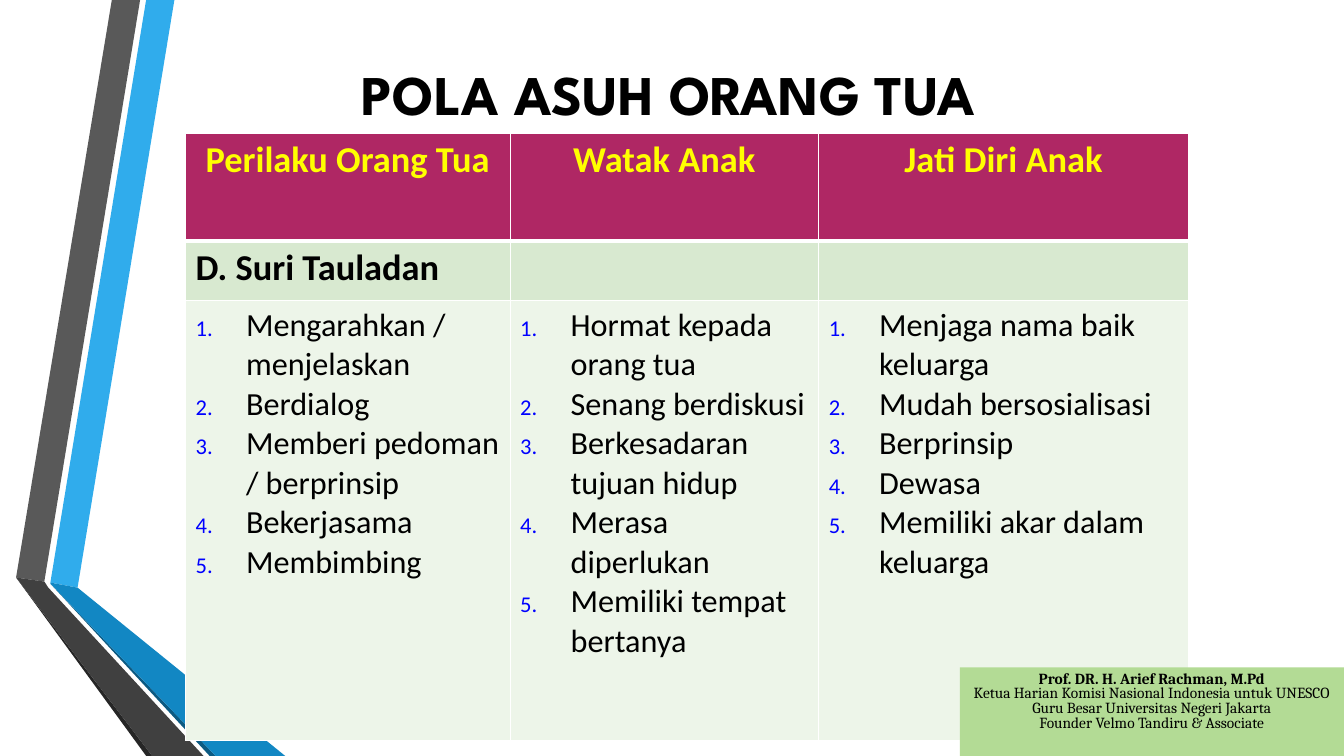
from dataclasses import dataclass

from lxml import etree
from pptx import Presentation
from pptx.dml.color import RGBColor
from pptx.enum import shapes, text
from pptx.oxml import ns
from pptx.util import Inches, Pt


@dataclass(frozen=True)
class Theme:
    black: str = "000000"
    white: str = "FFFFFF"
    header: str = "AF2764"
    header_text: str = "FFFF00"
    section: str = "D8E9D0"
    body: str = "EDF5E9"
    number: str = "0000FF"
    credit: str = "B3DB95"
    title_font: str = "League Spartan"
    table_font: str = "Calibri"
    credit_font: str = "Cambria"
    title_size: int = 40
    heading_size: int = 26
    item_size: int = 23
    credit_size: int = 11


@dataclass(frozen=True)
class Ribbon:
    color: str
    points: tuple[tuple[float, float], ...]


@dataclass(frozen=True)
class Column:
    heading: str
    section: str
    items: tuple[str, ...]
    width: float


@dataclass(frozen=True)
class TextStyle:
    font: str
    size: int
    color: str
    bold: bool = False
    align: text.PP_ALIGN = text.PP_ALIGN.LEFT


THEME = Theme()
CENTER = text.PP_ALIGN.CENTER
TITLE = TextStyle(THEME.title_font, THEME.title_size, THEME.black, True, CENTER)
HEADING = TextStyle(THEME.table_font, THEME.heading_size, THEME.header_text, True, CENTER)
SECTION = TextStyle(THEME.table_font, THEME.heading_size, THEME.black, True)
ITEM = TextStyle(THEME.table_font, THEME.item_size, THEME.black)
CREDIT_NAME = TextStyle(THEME.credit_font, THEME.credit_size, THEME.black, True, CENTER)
CREDIT_ROLE = TextStyle(THEME.credit_font, THEME.credit_size, THEME.black, False, CENTER)

RIBBONS = (
    Ribbon("30ACEC", ((0.5, 5.78), (0.77, 5.83), (1.73, 0), (1.45, 0))),
    Ribbon("595959", ((1.39, 0), (1.11, 0), (0.16, 5.73), (0.44, 5.77))),
    Ribbon("262626", ((0.16, 5.73), (1.45, 7.5), (1.51, 7.5))),
    Ribbon("0C5A82", ((0.5, 5.79), (2.08, 7.5), (2.14, 7.5))),
    Ribbon("1287C3", ((0.5, 5.79), (2.14, 7.5), (2.83, 7.5), (0.77, 5.83), (0.5, 5.78))),
    Ribbon("404040", ((2.02, 7.5), (0.48, 5.83), (0.44, 5.77), (0.16, 5.73), (1.51, 7.5))),
)

COLUMNS = (
    Column("Perilaku Orang Tua", "D. Suri Tauladan",
           ("Mengarahkan / menjelaskan", "Berdialog", "Memberi pedoman / berprinsip",
            "Bekerjasama", "Membimbing"), 3.22),
    Column("Watak Anak", "",
           ("Hormat kepada orang tua", "Senang berdiskusi", "Berkesadaran tujuan hidup",
            "Merasa diperlukan", "Memiliki tempat bertanya"), 3.06),
    Column("Jati Diri Anak", "",
           ("Menjaga nama baik keluarga", "Mudah bersosialisasi", "Berprinsip",
            "Dewasa", "Memiliki akar dalam keluarga"), 3.67),
)
ROW_HEIGHTS = (1.07, 0.59, 4.37)

CREDIT_LINES = (
    "Prof. DR. H. Arief Rachman, M.Pd",
    "Ketua Harian Komisi Nasional Indonesia untuk UNESCO",
    "Guru Besar Universitas Negeri Jakarta",
    "Founder Velmo Tandiru & Associate",
)


def rgb(color: str) -> RGBColor:
    return RGBColor.from_string(color)


def paint(shape, color: str) -> None:
    shape.shadow.inherit = False
    shape.fill.solid()
    shape.fill.fore_color.rgb = rgb(color)
    shape.line.fill.background()


def write(frame, lines: tuple[str, ...], style: TextStyle) -> None:
    frame.text = "\n".join(lines)
    for paragraph in frame.paragraphs:
        paragraph.alignment = style.align
        apply_font(paragraph.font, style)


def apply_font(font, style: TextStyle) -> None:
    font.name = style.font
    font.size = Pt(style.size)
    font.bold = style.bold
    font.color.rgb = rgb(style.color)


def number(paragraph) -> None:
    properties = paragraph._p.get_or_add_pPr()
    properties.set("marL", str(Inches(0.5)))
    properties.set("indent", str(Inches(-0.5)))
    bullets = (
        etree.Element(ns.qn("a:buClr")),
        etree.Element(ns.qn("a:buSzPct"), val="70000"),
        etree.Element(ns.qn("a:buFont"), typeface="+mj-lt"),
        etree.Element(ns.qn("a:buAutoNum"), type="arabicPeriod"),
    )
    etree.SubElement(bullets[0], ns.qn("a:srgbClr"), val=THEME.number)
    for position, bullet in enumerate(bullets):
        properties.insert(position, bullet)


def border(cell, bottom: float, top: float) -> None:
    properties = cell._tc.get_or_add_tcPr()
    widths = {"a:lnL": 1, "a:lnR": 1, "a:lnT": top, "a:lnB": bottom}
    for position, (side, width) in enumerate(widths.items()):
        line = etree.Element(ns.qn(side), w=str(Pt(width)))
        fill = etree.SubElement(line, ns.qn("a:solidFill"))
        etree.SubElement(fill, ns.qn("a:srgbClr"), val=THEME.white)
        properties.insert(position, line)


def draw_ribbon(slide, ribbon: Ribbon) -> None:
    start, *rest = [(Inches(x), Inches(y)) for x, y in ribbon.points]
    builder = slide.shapes.build_freeform(*start)
    builder.add_line_segments(rest, close=True)
    paint(builder.convert_to_shape(), ribbon.color)


def draw_title(slide) -> None:
    title = slide.shapes.add_textbox(Inches(1.84), Inches(0.52), Inches(9.58), Inches(0.8))
    title.text_frame.word_wrap = True
    title.text_frame.vertical_anchor = text.MSO_ANCHOR.MIDDLE
    write(title.text_frame, ("POLA ASUH ORANG TUA",), TITLE)


def draw_table(slide) -> None:
    parenting = slide.shapes.add_table(
        len(ROW_HEIGHTS), len(COLUMNS), Inches(1.84), Inches(1.32),
        Inches(sum(column.width for column in COLUMNS)), Inches(sum(ROW_HEIGHTS))).table
    parenting.horz_banding = False
    for row, height in zip(parenting.rows, ROW_HEIGHTS):
        row.height = Inches(height)
    fills = (THEME.header, THEME.section, THEME.body)
    styles = (HEADING, SECTION, ITEM)
    for column_index, column in enumerate(COLUMNS):
        parenting.columns[column_index].width = Inches(column.width)
        contents = ((column.heading,), (column.section,), column.items)
        for row_index, (lines, fill, style) in enumerate(zip(contents, fills, styles)):
            cell = parenting.cell(row_index, column_index)
            cell.fill.solid()
            cell.fill.fore_color.rgb = rgb(fill)
            border(cell, bottom=3 if row_index == 0 else 1, top=3 if row_index == 1 else 1)
            write(cell.text_frame, lines, style)
        for paragraph in parenting.cell(2, column_index).text_frame.paragraphs:
            number(paragraph)


def draw_credit(slide) -> None:
    credit = slide.shapes.add_shape(
        shapes.MSO_SHAPE.RECTANGLE, Inches(9.52), Inches(6.62), Inches(3.81), Inches(0.88))
    paint(credit, THEME.credit)
    frame = credit.text_frame
    frame.word_wrap = True
    frame.vertical_anchor = text.MSO_ANCHOR.TOP
    write(frame, CREDIT_LINES, CREDIT_ROLE)
    apply_font(frame.paragraphs[0].font, CREDIT_NAME)
    for paragraph in frame.paragraphs:
        paragraph.line_spacing = 0.8


def main() -> None:
    deck = Presentation()
    deck.slide_width, deck.slide_height = Inches(13.33), Inches(7.5)
    slide = deck.slides.add_slide(deck.slide_layouts[6])
    for ribbon in RIBBONS:
        draw_ribbon(slide, ribbon)
    draw_title(slide)
    draw_table(slide)
    draw_credit(slide)
    deck.save("out.pptx")


if __name__ == "__main__":
    main()
